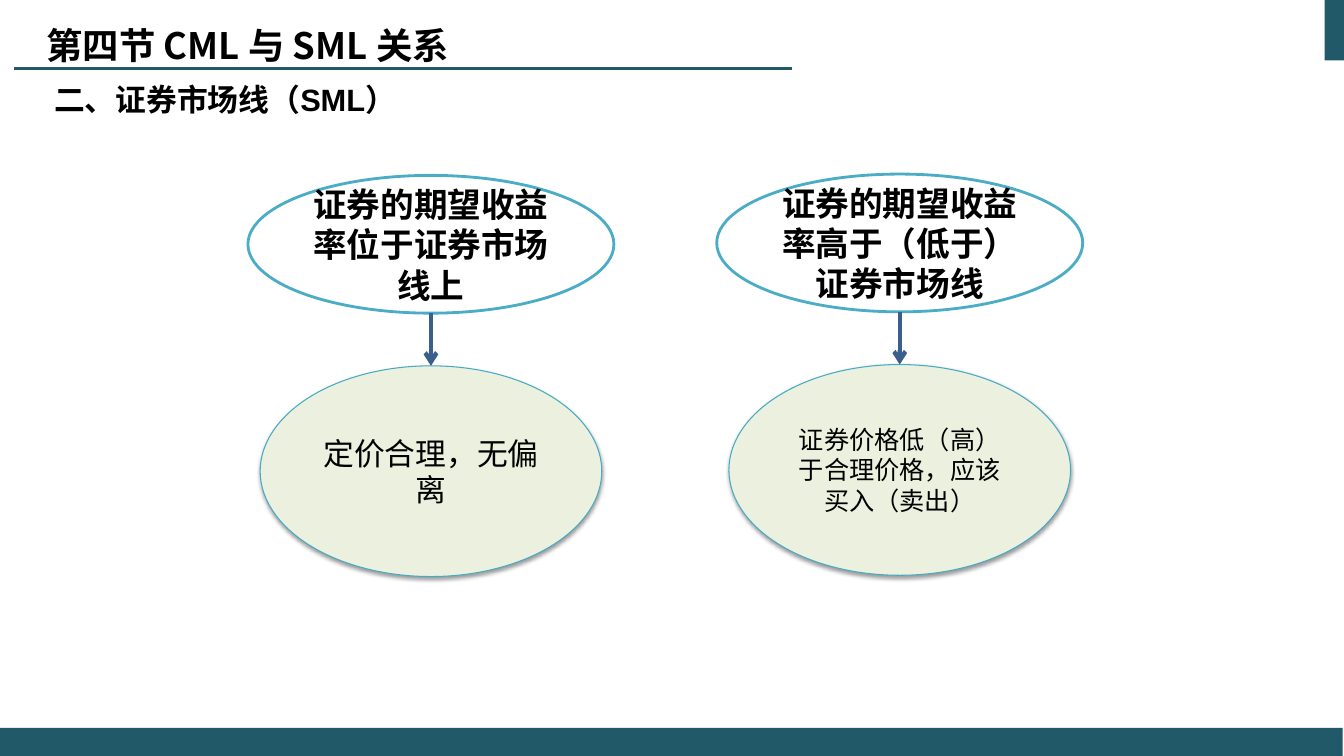
from collections import namedtuple

from lxml import etree
from pptx import Presentation
from pptx.dml.color import RGBColor
from pptx.enum.shapes import MSO_CONNECTOR as Connector, MSO_SHAPE as Preset
from pptx.enum.text import MSO_ANCHOR as Anchor, MSO_AUTO_SIZE as AutoSize, PP_ALIGN as Align
from pptx.oxml.ns import qn
from pptx.util import Inches, Pt

COLORS = {"teal": "215968", "ring": "4BACC6", "edge": "46AAC5",
          "pale": "EBF1DE", "arrow": "3A5F8C", "ink": "000000"}
HAN_FONT = "Noto Sans CJK SC"
SLIDE_WIDTH, SLIDE_HEIGHT = Inches(13.333), Inches(7.5)

Box = namedtuple("Box", "left top width height")


def percent_box(left, top, width, height):
    """Turn percentages of the slide's size into a box."""
    return Box(int(SLIDE_WIDTH * left / 100), int(SLIDE_HEIGHT * top / 100),
               int(SLIDE_WIDTH * width / 100), int(SLIDE_HEIGHT * height / 100))


def color(name):
    return RGBColor.from_string(COLORS[name])


def write_text(shape, text, size, font, bold=False, align=Align.LEFT, anchor=Anchor.TOP):
    frame = shape.text_frame
    frame.word_wrap = True
    frame.vertical_anchor = anchor
    para = frame.paragraphs[0]
    para.alignment = align
    span = para.add_run()
    span.text = text
    span.font.size, span.font.bold, span.font.name = Pt(size), bold, font
    span.font.color.rgb = color("ink")
    etree.SubElement(span.font._element, qn("a:ea"), typeface=HAN_FONT)


def add_figure(page, preset, box, fill=None, line=None, weight=1):
    shape = page.shapes.add_shape(preset, *box)
    shape.shadow.inherit = False
    if fill:
        shape.fill.solid()
        shape.fill.fore_color.rgb = color(fill)
    else:
        shape.fill.background()
    if line:
        shape.line.color.rgb = color(line)
        shape.line.width = Pt(weight)
    else:
        shape.line.fill.background()
    return shape


def add_line(page, start, end, line, weight):
    connector = page.shapes.add_connector(Connector.STRAIGHT, *start, *end)
    connector.line.color.rgb = color(line)
    connector.line.width = Pt(weight)
    etree.SubElement(connector._element.spPr, qn("a:effectLst"))
    return connector


def add_soft_shadow(shape):
    effects = shape._element.spPr.find(qn("a:effectLst"))
    shadow = etree.SubElement(effects, qn("a:outerShdw"), blurRad=str(Pt(3.1)),
                              dist=str(Pt(1.6)), dir="5400000", rotWithShape="0")
    tint = etree.SubElement(shadow, qn("a:srgbClr"), val=COLORS["ink"])
    etree.SubElement(tint, qn("a:alpha"), val="38000")


def add_frame(page):
    """Draw the corner block, the rule under the title and the footer bar."""
    add_figure(page, Preset.RECTANGLE, percent_box(98.55, 0, 1.45, 8), fill="teal")
    rule = percent_box(1.05, 9.07, 57.9, 0)
    add_line(page, (rule.left + rule.width, rule.top), (rule.left, rule.top), "teal", 1.5)
    add_figure(page, Preset.RECTANGLE, percent_box(0, 96.27, 99.9, 3.73), fill="teal")


def add_headings(page, title_box, subtitle_box):
    title = page.shapes.add_textbox(*title_box)
    write_text(title, "第四节 CML 与 SML 关系", size=26, font=HAN_FONT, bold=True)
    title.text_frame.auto_size = AutoSize.SHAPE_TO_FIT_TEXT
    subtitle = page.shapes.add_textbox(*subtitle_box)
    write_text(subtitle, "二、证券市场线（SML）", size=22, font="Arial", bold=True,
               anchor=Anchor.MIDDLE)


def add_case(page, box, condition, conclusion, size, font):
    """Stack a condition, an arrow and a conclusion in 99 rows and 30 columns."""
    row, column = box.height / 99, box.width / 30
    centered = {"align": Align.CENTER, "anchor": Anchor.MIDDLE}

    upper_box = box._replace(height=int(34 * row))
    upper = add_figure(page, Preset.OVAL, upper_box, line="ring", weight=2)
    write_text(upper, condition, size=24, font="Times New Roman", bold=True, **centered)

    lower_box = Box(int(box.left + column), int(box.top + 47 * row),
                    int(28 * column), int(52 * row))
    lower = add_figure(page, Preset.OVAL, lower_box, fill="pale", line="edge", weight=0.75)
    add_soft_shadow(lower)
    write_text(lower, conclusion, size=size, font=font, **centered)

    middle = box.left + box.width // 2
    arrow = add_line(page, (middle, upper_box.top + upper_box.height),
                     (middle, lower_box.top), "arrow", 3)
    arrow.end_connect(lower, 0)
    etree.SubElement(arrow.line._get_or_add_ln(), qn("a:tailEnd"), type="arrow")


def main():
    deck = Presentation()
    deck.slide_width, deck.slide_height = SLIDE_WIDTH, SLIDE_HEIGHT
    page = deck.slides.add_slide(deck.slide_layouts[6])
    add_frame(page)
    add_headings(page, percent_box(2.7, 2.4, 64.5, 13.07), percent_box(3.3, 9.07, 81.6, 8.13))
    add_case(page, percent_box(18.45, 23.2, 27.23, 53.07),
             "证券的期望收益率位于证券市场线上", "定价合理，无偏离",
             size=22, font="Times New Roman")
    add_case(page, percent_box(53.33, 23.03, 27.23, 53.07),
             "证券的期望收益率高于（低于）证券市场线",
             "证券价格低（高）于合理价格，应该买入（卖出）",
             size=18, font="Calibri")
    deck.save("out.pptx")


if __name__ == "__main__":
    main()
